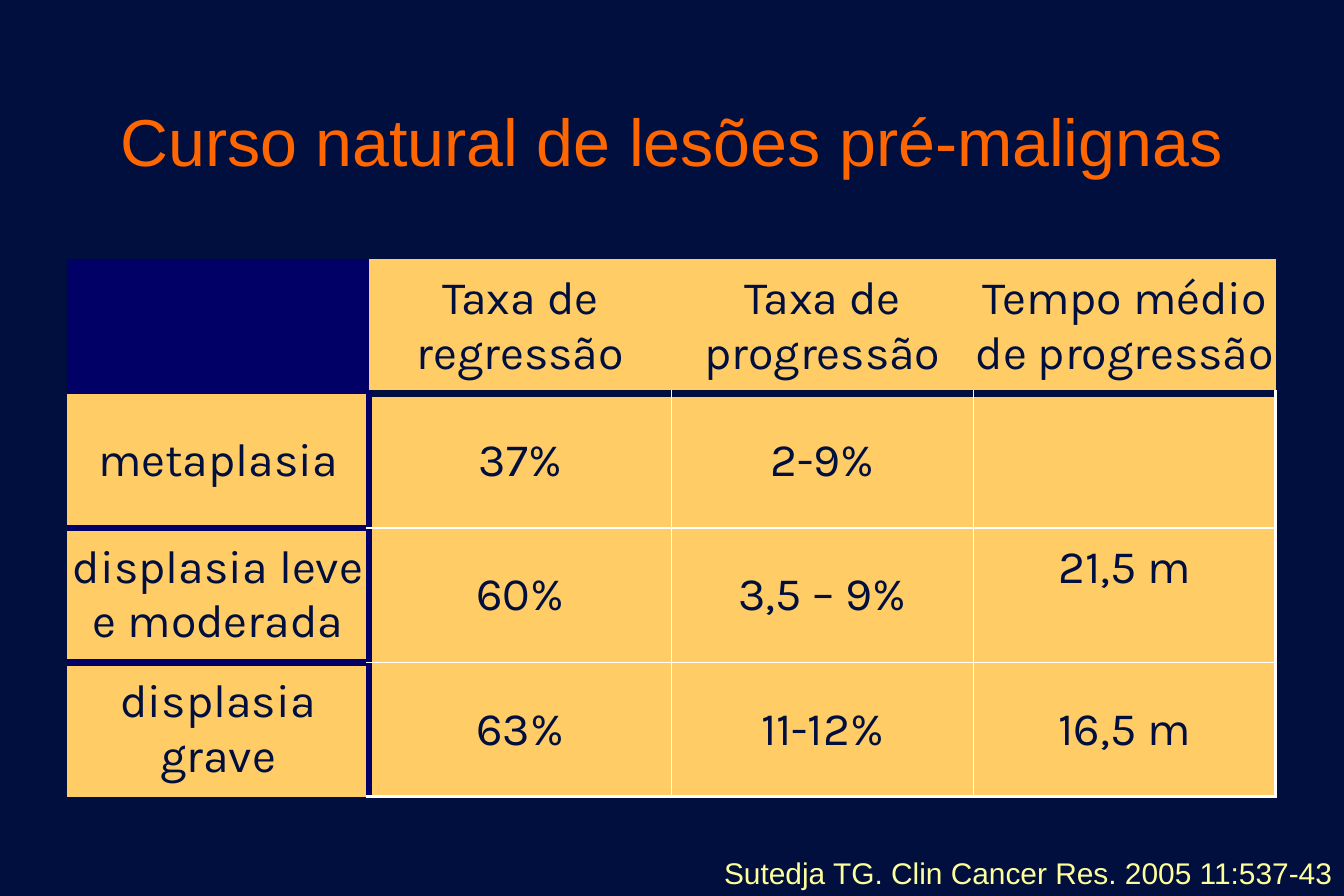
from lxml import etree
from pptx import Presentation
from pptx.dml.color import RGBColor
from pptx.enum.text import MSO_ANCHOR as Anchor, PP_ALIGN as Align
from pptx.oxml.ns import qn
from pptx.util import Inches, Pt

COLORS = {
    "background": "000F3E",
    "navy": "000066",
    "gold": "FFCC66",
    "white": "FFFFFF",
    "title": "FF6600",
    "source": "FFFF99",
}
ROWS = [
    ["", "Taxa de regressão", "Taxa de progressão", "Tempo médio de progressão"],
    ["metaplasia", "37%", "2-9%", ""],
    ["displasia leve e moderada", "60%", "3,5 – 9%", "21,5 m"],
    ["displasia grave", "63%", "11-12%", "16,5 m"],
]
LAST = 3


def style_text(frame, size, font, color, align, anchor):
    frame.word_wrap = True
    frame.vertical_anchor = anchor
    para = frame.paragraphs[0]
    para.alignment = align
    para.font.size = Pt(size)
    para.font.name = font
    para.font.color.rgb = RGBColor.from_string(COLORS[color])


def set_borders(cell, edges):
    """Draw the left, right, top and bottom edges, each (color, points) or None."""
    properties = cell._tc.get_or_add_tcPr()
    for position, (side, edge) in enumerate(zip("LRTB", edges)):
        line = etree.Element(qn(f"a:ln{side}"))
        if edge:
            color, points = edge
            line.set("w", str(Pt(points)))
            fill = etree.SubElement(line, qn("a:solidFill"))
            etree.SubElement(fill, qn("a:srgbClr"), val=COLORS[color])
        else:
            etree.SubElement(line, qn("a:noFill"))
        properties.insert(position, line)


deck = Presentation()
deck.slide_width, deck.slide_height = Inches(11.25), Inches(7.5)
page = deck.slides.add_slide(deck.slide_layouts[5])
page.background.fill.solid()
page.background.fill.fore_color.rgb = RGBColor.from_string(COLORS["background"])

# Source line
source = page.shapes.add_textbox(Inches(1.77), Inches(6.98), Inches(9.48), Inches(0.52))
source.text_frame.text = "Sutedja TG. Clin Cancer Res. 2005 11:537-43"
style_text(source.text_frame, 18, "Arial", "source", Align.RIGHT, Anchor.BOTTOM)

# Title
title = page.shapes.title
title.left, title.top = Inches(0.56), Inches(0.42)
title.width, title.height = Inches(10.12), Inches(1.5)
title.text_frame.text = "Curso natural de lesões pré-malignas"
style_text(title.text_frame, 40, "Arial", "title", Align.CENTER, Anchor.MIDDLE)

# Edges to the right of and below each cell; missing ones are not drawn
right, below = {}, {}
for r in range(LAST + 1):
    for c in range(LAST + 1):
        if r > 0:
            right[r, c] = ("navy", 4.5) if c == 0 else ("white", 2.25 if c == LAST else 1)
        if c == 0:
            below[r, c] = ("navy", 4.5) if 0 < r < LAST else None
        elif r == 0:
            below[r, c] = ("background", 4.5)
        else:
            below[r, c] = ("white", 2.25 if r == LAST else 1)

# Table
table = page.shapes.add_table(
    len(ROWS), len(ROWS[0]), Inches(0.56), Inches(2.17), Inches(10.12), Inches(4.5)
).table
table.first_row = table.horz_banding = False
for r, texts in enumerate(ROWS):
    for c, text in enumerate(texts):
        cell = table.cell(r, c)
        cell.fill.solid()
        fill = "navy" if r == c == 0 else "gold"
        cell.fill.fore_color.rgb = RGBColor.from_string(COLORS[fill])
        set_borders(cell, [right.get((r, c - 1)), right.get((r, c)),
                           below.get((r - 1, c)), below.get((r, c))])
        cell.margin_left = cell.margin_right = cell.margin_top = cell.margin_bottom = 0
        cell.vertical_anchor = Anchor.MIDDLE
        cell.text = text
        para = cell.text_frame.paragraphs[0]
        para.alignment = Align.CENTER
        para.font.size = Pt(28)
        para.font.name = "Karla"
        para.font.color.rgb = RGBColor.from_string(COLORS["background"])
# This value sits half a line above the middle
table.cell(2, 3).margin_bottom = Inches(0.45)

deck.save("out.pptx")
